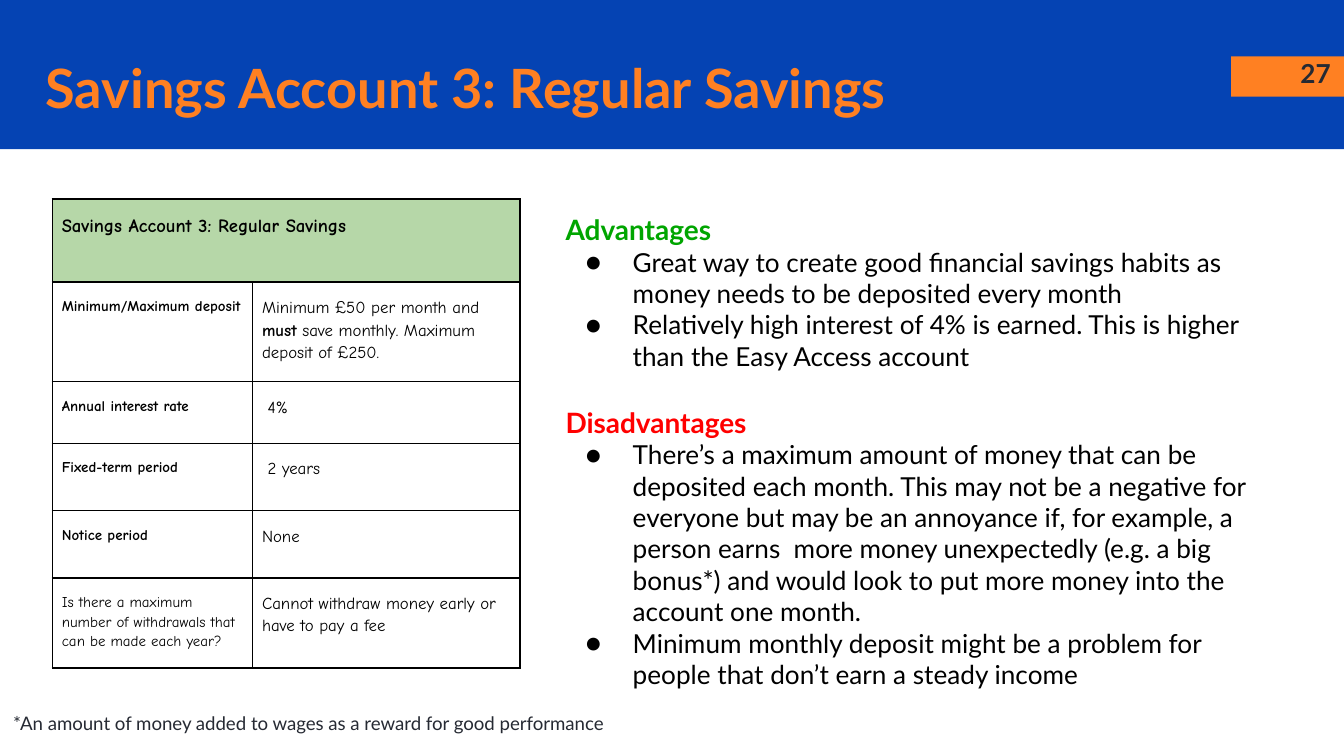
from lxml import etree
from pptx import Presentation
from pptx.dml.color import RGBColor
from pptx.enum.shapes import MSO_SHAPE
from pptx.enum.text import PP_ALIGN
from pptx.oxml.ns import qn
from pptx.util import Inches, Pt

RECT = MSO_SHAPE.RECTANGLE
LEFT, RIGHT = PP_ALIGN.LEFT, PP_ALIGN.RIGHT
BLUE = RGBColor(0x05, 0x43, 0xB3)
ORANGE = RGBColor(0xFF, 0x80, 0x22)
DARK = RGBColor(0x26, 0x2A, 0x33)
BLACK = RGBColor(0, 0, 0)
WHITE = RGBColor(0xFF, 0xFF, 0xFF)
GREEN = RGBColor(0, 0xA5, 0)
RED = RGBColor(0xFF, 0, 0)
SAGE = RGBColor(0xB6, 0xD7, 0xA8)
SANS, COMIC = "Lato", "Comic Neue"

# Content
TITLE = "Savings Account 3: Regular Savings"
NUMBER = "27"
NOTE = "*An amount of money added to wages as a reward for good performance"
POINTS = [
    ("Advantages", GREEN, [
        "Great way to create good financial savings habits as money needs to "
        "be deposited every month",
        "Relatively high interest of 4% is earned. This is higher than the "
        "Easy Access account",
    ]),
    ("Disadvantages", RED, [
        "There’s a maximum amount of money that can be deposited each month. "
        "This may not be a negative for everyone but may be an annoyance if, "
        "for example, a person earns  more money unexpectedly (e.g. a big "
        "bonus*) and would look to put more money into the account one month.",
        "Minimum monthly deposit might be a problem for people that don’t "
        "earn a steady income",
    ]),
]
# Row height, label, label is bold, value runs (text, bold), value fill
TERMS = [
    (0.74, "Minimum/Maximum deposit", True,
     [("Minimum £50 per month and ", False), ("must", True),
      (" save monthly. Maximum deposit of £250.", False)], None),
    (0.46, "Annual interest rate", True, [(" 4%", False)], None),
    (0.5, "Fixed-term period", True, [(" 2 years", False)], WHITE),
    (0.5, "Notice period", True, [("None", False)], WHITE),
    (0.67, "Is there a maximum number of withdrawals that can be made each "
     "year?", False,
     [("Cannot withdraw money early or have to pay a fee", False)], WHITE),
]
HEAD = 0.62
COLS = [1.49, 1.99]

# Widescreen page, 16 to 9
deck = Presentation()
deck.slide_width, deck.slide_height = Inches(10), Inches(10 * 9 / 16)
slide = deck.slides.add_slide(deck.slide_layouts[6])


def style(run, size, color, bold=False, face=SANS):
    font = run.font
    font.name, font.size, font.bold = face, Pt(size), bold
    font.color.rgb = color


def add_bar(x, y, w, h, color):
    bar = slide.shapes.add_shape(RECT, *map(Inches, (x, y, w, h)))
    bar.shadow.inherit = False
    bar.fill.solid()
    bar.fill.fore_color.rgb = color
    bar.line.fill.background()


def add_box(x, y, w, h):
    frame = slide.shapes.add_textbox(*map(Inches, (x, y, w, h))).text_frame
    frame.word_wrap = True
    frame.margin_left = frame.margin_right = Inches(0.1)
    frame.margin_top = frame.margin_bottom = Inches(0.1)
    return frame


def add_line(place, text, size, color, bold=False, align=LEFT, space=None):
    frame = add_box(*place)
    para = frame.paragraphs[0]
    para.text, para.alignment, para.line_spacing = text, align, space
    style(para.runs[0], size, color, bold)


def add_bullet(para):
    props = para._p.get_or_add_pPr()
    props.set("marL", str(Inches(0.5)))
    props.set("indent", str(Inches(-0.35)))
    tint = etree.SubElement(props, qn("a:buClr"))
    etree.SubElement(tint, qn("a:srgbClr"), val=str(BLACK))
    etree.SubElement(props, qn("a:buFont"), typeface=SANS)
    etree.SubElement(props, qn("a:buChar"), char="●")


def fill_cell(cell, runs, size, color=None):
    cell.margin_left = cell.margin_right = Inches(0.07)
    cell.margin_top = cell.margin_bottom = Inches(0.1)
    para = cell.text_frame.paragraphs[0]
    para.line_spacing = 1.15
    for text, bold in runs:
        run = para.add_run()
        run.text = text
        style(run, size, BLACK, bold, COMIC)
    if color is None:
        cell.fill.background()
    else:
        cell.fill.solid()
        cell.fill.fore_color.rgb = color


def add_border(cell):
    props = cell._tc.get_or_add_tcPr()
    for side in ("lnL", "lnR", "lnT", "lnB"):
        edge = etree.SubElement(props, qn("a:" + side), w=str(Pt(1)))
        solid = etree.SubElement(edge, qn("a:solidFill"))
        etree.SubElement(solid, qn("a:srgbClr"), val=str(BLACK))


# Header band and page number
add_bar(0, 0, 10, 1.11, BLUE)
add_bar(9.16, 0.42, 0.84, 0.3, ORANGE)
add_line((9.4, 0.33, 0.6, 0.43), NUMBER, 14, DARK, True, RIGHT)

# Advantages and disadvantages
frame = add_box(4.11, 1.48, 5.36, 3.79)
for i, (head, color, items) in enumerate(POINTS):
    para = frame.add_paragraph() if i else frame.paragraphs[0]
    para.text = head
    if i:
        para.space_before = Pt(18)
    style(para.runs[0], 15, color, True)
    for item in items:
        para = frame.add_paragraph()
        para.text = item
        add_bullet(para)
        style(para.runs[0], 14, BLACK)

# Account terms table
heights = [HEAD] + [term[0] for term in TERMS]
table = slide.shapes.add_table(
    len(heights), len(COLS), Inches(0.39), Inches(1.48),
    Inches(sum(COLS)), Inches(sum(heights))).table
for col, width in zip(table.columns, COLS):
    col.width = Inches(width)
for row, height in zip(table.rows, heights):
    row.height = Inches(height)
for cell in table.iter_cells():
    add_border(cell)
table.cell(0, 0).merge(table.cell(0, 1))
fill_cell(table.cell(0, 0), [(TITLE, True)], 10, SAGE)
for i, (_, label, bold, runs, color) in enumerate(TERMS, 1):
    fill_cell(table.cell(i, 0), [(label, bold)], 8)
    fill_cell(table.cell(i, 1), runs, 9, color)

# Title and footnote
add_line((0.24, 0.23, 7.61, 0.69), TITLE, 29, ORANGE, True, space=1.15)
add_line((0, 5.21, 4.68, 0.4), NOTE, 10, DARK)

deck.save("out.pptx")
